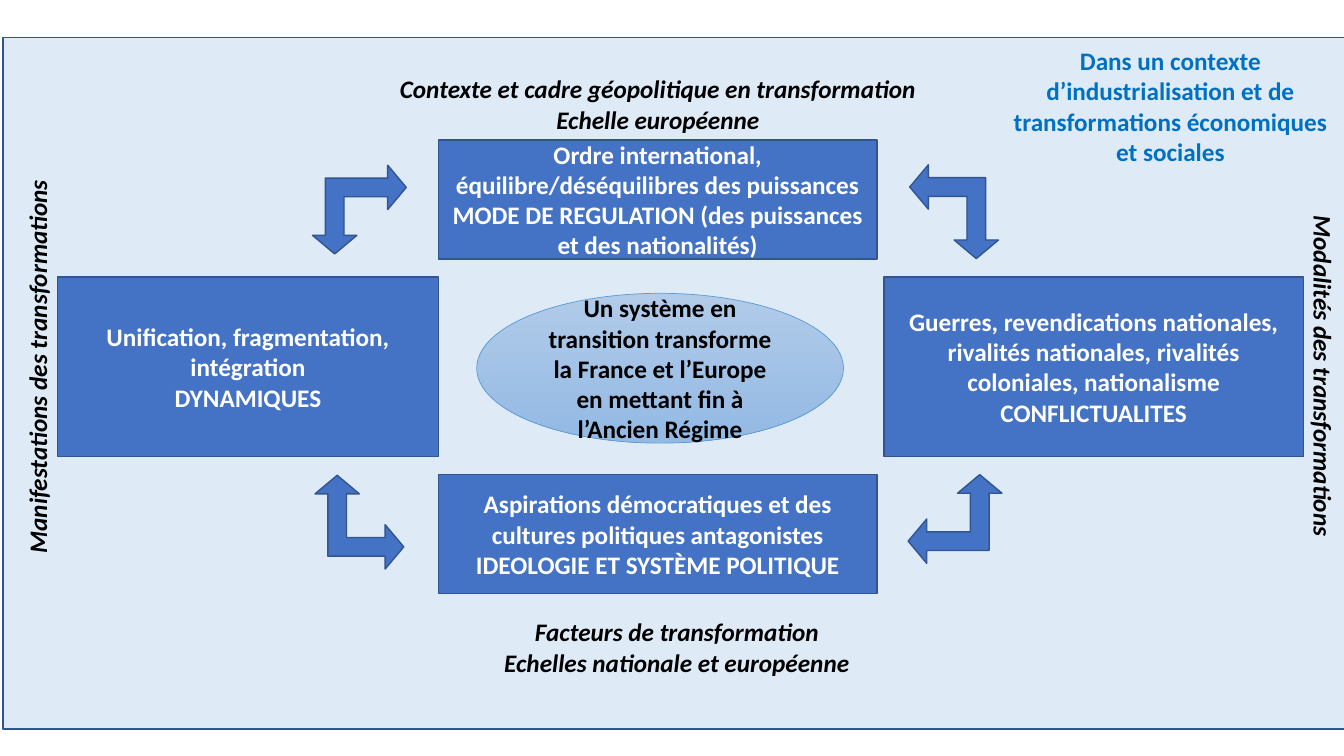
from pptx import Presentation
from pptx.dml.color import RGBColor
from pptx.enum.shapes import MSO_SHAPE
from pptx.enum.text import MSO_ANCHOR, MSO_AUTO_SIZE, PP_ALIGN
from pptx.util import Pt

BLUE, OUTLINE, WHITE, BLACK = "4472C4", "325491", "FFFFFF", "000000"


def add_figure(kind, box, fill, line, line_width=1):
    """Add a preset shape; box is left, top, width, height in points."""
    shape = slide.shapes.add_shape(kind, *map(Pt, box))
    shape.shadow.inherit = False
    shape.fill.solid()
    shape.fill.fore_color.rgb = RGBColor.from_string(fill)
    shape.line.color.rgb = RGBColor.from_string(line)
    shape.line.width = Pt(line_width)
    return shape


def write(shape, lines, color, italic=False):
    """Write one centred bold paragraph per line."""
    frame = shape.text_frame
    frame.word_wrap = True
    for index, line in enumerate(lines):
        paragraph = frame.add_paragraph() if index else frame.paragraphs[0]
        paragraph.alignment = PP_ALIGN.CENTER
        run = paragraph.add_run()
        run.text = line
        run.font.name = "Calibri"
        run.font.size = Pt(18)
        run.font.bold = True
        run.font.italic = italic
        run.font.color.rgb = RGBColor.from_string(color)


presentation = Presentation()
presentation.slide_width = Pt(960)
presentation.slide_height = Pt(540)
slide = presentation.slides.add_slide(presentation.slide_layouts[6])

add_figure(MSO_SHAPE.RECTANGLE, (2, 26.7, 960, 494), "DEEBF7", OUTLINE)

# Four themes around the centre
themes = [
    ((313.2, 100, 313.2, 85),
     ["Ordre international, équilibre/déséquilibres des puissances",
      "MODE DE REGULATION (des puissances et des nationalités)"]),
    ((313.2, 339, 313.2, 85),
     ["Aspirations démocratiques et des cultures politiques antagonistes",
      "IDEOLOGIE ET SYSTÈME POLITIQUE"]),
    ((41, 198, 272.2, 128),
     ["Unification, fragmentation, intégration", "DYNAMIQUES"]),
    ((631.5, 198, 299.5, 128),
     ["Guerres, revendications nationales, rivalités nationales, "
      "rivalités coloniales, nationalisme", "CONFLICTUALITES"]),
]
for box, lines in themes:
    theme = add_figure(MSO_SHAPE.RECTANGLE, box, BLUE, OUTLINE)
    theme.text_frame.vertical_anchor = MSO_ANCHOR.MIDDLE
    write(theme, lines, WHITE)

# Captions: box, rotation, colour, italic, lines
captions = [
    ((261.4, 49, 417, 51), 0, BLACK, True,
     ["Contexte et cadre géopolitique en transformation", "Echelle européenne"]),
    ((275, 437, 417, 51), 0, BLACK, True,
     ["Facteurs de transformation", "Echelles nationale et européenne"]),
    ((811.4, 254, 268, 29), 90, BLACK, True, ["Modalités des transformations"]),
    ((-124.6, 247.5, 302.4, 29), 270, BLACK, True,
     ["Manifestations des transformations"]),
    ((712, 29, 248, 94.3), 0, "0070C0", False,
     ["Dans un contexte d’industrialisation et de transformations "
      "économiques et sociales"]),
]
for box, rotation, color, italic, lines in captions:
    caption = slide.shapes.add_textbox(*map(Pt, box))
    caption.rotation = rotation
    write(caption, lines, color, italic)
    caption.text_frame.auto_size = MSO_AUTO_SIZE.SHAPE_TO_FIT_TEXT

# Central system
system = add_figure(MSO_SHAPE.OVAL, (340.5, 209.5, 262, 107), "A3C1E5", "5B9BD5", 0.5)
system.fill.gradient()
system.fill.gradient_angle = 270
for stop, color, position in zip(system.fill.gradient_stops, ("B1CBE9", "93B9E4"), (0, 1)):
    stop.color.rgb = RGBColor.from_string(color)
    stop.position = position
system.text_frame.vertical_anchor = MSO_ANCHOR.MIDDLE
write(system, ["Un système en transition transforme la France et l’Europe "
               "en mettant fin à l’Ancien Régime"], BLACK)

# Double arrows, clockwise from the bottom right corner
corners = [(648.7, 339), (223.2, 341.3), (223.2, 118), (648, 119.5)]
for quarter, (left, top) in enumerate(corners):
    arrow = add_figure(MSO_SHAPE.LEFT_UP_ARROW, (left, top, 67, 63.4), BLUE, OUTLINE)
    arrow.rotation = 90 * quarter
    for index, ratio in enumerate((0.21, 0.25, 0.21)):
        arrow.adjustments[index] = ratio

presentation.save("out.pptx")
